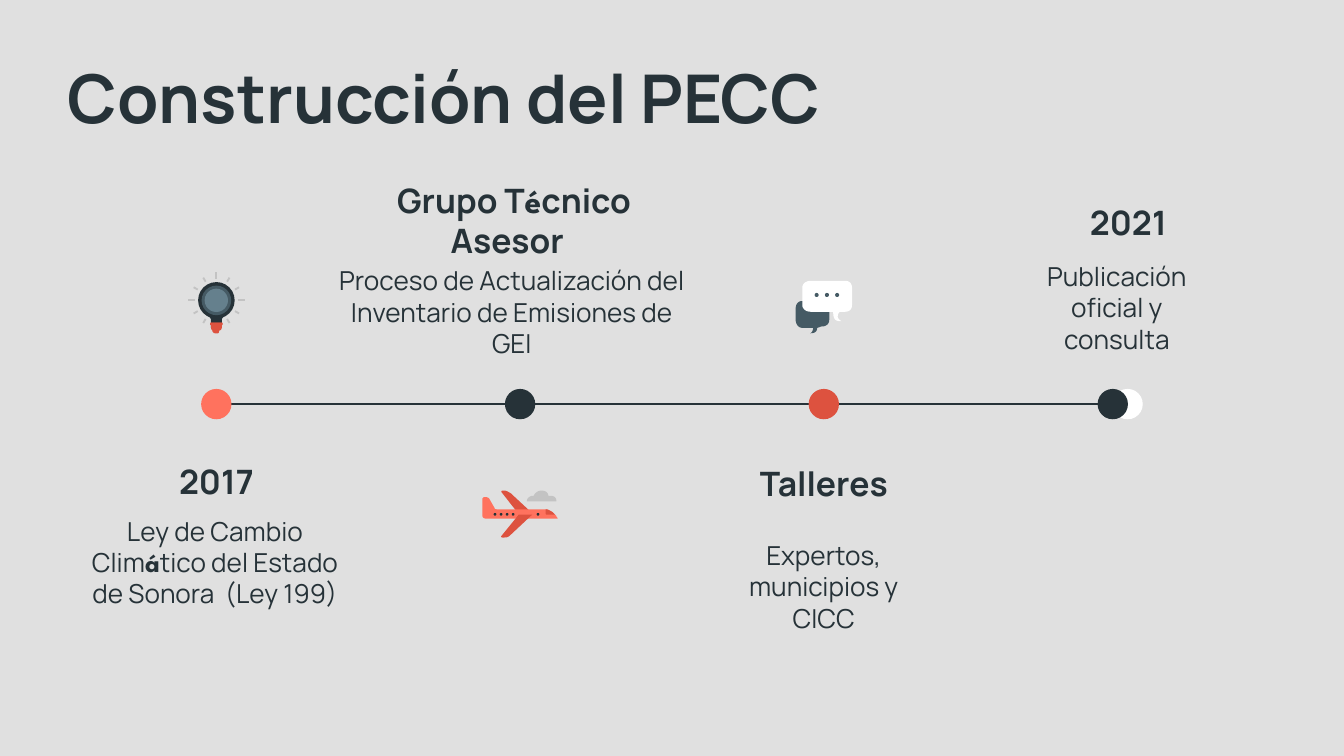
from math import cos, pi, sin
from lxml.etree import SubElement
from pptx import Presentation
from pptx.dml.color import RGBColor
from pptx.enum.shapes import MSO_CONNECTOR, MSO_SHAPE
from pptx.enum.text import MSO_ANCHOR, PP_ALIGN
from pptx.oxml.ns import qn
from pptx.util import Inches, Pt

PAPER = RGBColor(0xE0, 0xE0, 0xE0)
INK = RGBColor(0x26, 0x32, 0x38)
SLATE = RGBColor(0x45, 0x5A, 0x64)
STEEL = RGBColor(0x65, 0x80, 0x8D)
CORAL = RGBColor(0xFF, 0x72, 0x5E)
RED = RGBColor(0xDD, 0x52, 0x3F)
GREY = RGBColor(0xC3, 0xC3, 0xC3)
WHITE = RGBColor(0xFF, 0xFF, 0xFF)
COLS = 100  # square grid cells across the slide


def write(frame, text, size=14, bold=False, align=PP_ALIGN.CENTER,
          font="Manrope", accent="League Spartan", color=INK):
    """Fill a frame; the parts between asterisks take the accent font."""
    para = frame.paragraphs[0]
    para.alignment = align
    for i, part in enumerate(text.split("*")):
        run = para.add_run()
        run.text = part
        run.font.name = accent if i % 2 else font
        run.font.size = Pt(size)
        run.font.bold = bold or i % 2 == 1
        run.font.color.rgb = color


class Board:
    """Holds the style and the current slide; lengths are grid cells."""

    def __init__(self, deck):
        self.cell = deck.slide_width / COLS
        self.slide = deck.slides.add_slide(deck.slide_layouts[6])
        self.slide.background.fill.solid()
        self.slide.background.fill.fore_color.rgb = PAPER
        self.shapes = self.slide.shapes

    def emu(self, *cells):
        return [round(c * self.cell) for c in cells]

    def group(self):
        self.shapes = self.slide.shapes.add_group_shape().shapes

    def text(self, text, x, y, w, h, anchor=MSO_ANCHOR.TOP, **style):
        frame = self.slide.shapes.add_textbox(*self.emu(x, y, w, h)).text_frame
        frame.word_wrap = True
        frame.vertical_anchor = anchor
        frame.margin_left = frame.margin_right = Inches(0.1)
        frame.margin_top = frame.margin_bottom = Inches(0.1)
        write(frame, text, **style)

    def head(self, text, x, y, w):
        self.text(text, x, y, w, 4.1, MSO_ANCHOR.MIDDLE, size=18, bold=True)

    def paint(self, shape, color):
        shape.shadow.inherit = False
        shape.fill.solid()
        shape.fill.fore_color.rgb = color
        shape.line.fill.background()

    def disc(self, color, x, y, r):
        box = self.emu(x - r, y - r, 2 * r, 2 * r)
        self.paint(self.shapes.add_shape(MSO_SHAPE.OVAL, *box), color)

    def line(self, color, x1, y1, x2, y2, width):
        ends = self.emu(x1, y1, x2, y2)
        line = self.shapes.add_connector(MSO_CONNECTOR.STRAIGHT, *ends)
        line.line.color.rgb = color
        line.line.width = Pt(width)
        SubElement(line._element.spPr, qn("a:effectLst"))

    def form(self, color, start, *parts, steps=8):
        """Closed outline: pairs are corners, sixes are cubic curves."""
        pts = [start]
        for part in parts:
            if len(part) == 2:
                pts.append(part)
                continue
            ends = [pts[-1], part[:2], part[2:4], part[4:]]
            for i in range(1, steps + 1):
                t = i / steps
                mix = ((1 - t)**3, 3 * t * (1 - t)**2, 3 * t**2 * (1 - t), t**3)
                pts.append(tuple(sum(m * p[k] for m, p in zip(mix, ends))
                                 for k in (0, 1)))
        pts = [self.emu(*p) for p in pts]
        pen = self.shapes.build_freeform(*pts[0])
        pen.add_line_segments(pts[1:], close=True)
        self.paint(pen.convert_to_shape(), color)


def bulb(board, x=16.1, y=22.35):
    board.group()
    # Glass with its neck
    board.form(INK, (15.5, 23.5), (15.6, 23.6, 15.7, 23.7, 15.7, 23.8),
               (15.7, 24.4), (16.5, 24.4), (16.5, 23.8),
               (16.5, 23.7, 16.6, 23.6, 16.7, 23.5))
    for color, r in ((INK, 1.36), (SLATE, 1.1), (STEEL, 0.87)):
        board.disc(color, x, y, r)
    # Rays, one every 30 degrees except straight down
    for i in range(12):
        if i == 3:
            continue
        near, far = (1.6, 2.1) if i % 3 == 0 else (1.6, 1.95)
        c, s = cos(i * pi / 6), sin(i * pi / 6)
        board.line(GREY, x + near * c, y + near * s, x + far * c, y + far * s, 1)
    # Socket
    board.form(RED, (15.7, 24), (15.7, 24.4), (15.7, 24.5, 15.8, 24.6, 15.8, 24.6),
               (15.8, 24.7, 15.9, 24.8, 16, 24.8), (16.2, 24.8),
               (16.3, 24.8, 16.3, 24.7, 16.3, 24.6),
               (16.4, 24.6, 16.5, 24.5, 16.5, 24.4), (16.5, 24))
    board.form(RED, (15.7, 24), (15.6, 24, 15.6, 24.2, 15.7, 24.2), (16.5, 24.2),
               (16.6, 24.2, 16.6, 24, 16.5, 24))


def chat(board):
    board.group()
    board.form(SLATE, (61.1, 22.4), (59.7, 22.4), (59.4, 22.4, 59.2, 22.6, 59.2, 23),
               (59.2, 23.8), (59.2, 24.1, 59.4, 24.4, 59.7, 24.4), (60.5, 24.4),
               (60.5, 24.4, 60.5, 24.7, 60.3, 24.8),
               (60.6, 24.8, 60.8, 24.7, 60.8, 24.4), (61.1, 24.3),
               (61.5, 24.3, 61.7, 24.1, 61.7, 23.8), (61.7, 22.9),
               (61.7, 22.6, 61.4, 22.4, 61.1, 22.4))
    board.form(WHITE, (60.3, 20.9), (60, 20.9, 59.7, 21.1, 59.7, 21.4), (59.7, 22.7),
               (59.7, 23, 60, 23.2, 60.3, 23.2), (62, 23.2),
               (62, 23.5, 62, 23.9, 62.5, 23.9), (62.6, 23.9),
               (62.5, 23.8, 62.2, 23.7, 62.4, 23.3), (62.5, 23.2), (62.9, 23.2),
               (63.2, 23.2, 63.4, 23, 63.4, 22.7), (63.4, 21.4),
               (63.4, 21.1, 63.2, 20.9, 62.9, 20.9))
    for i in range(3):
        board.disc(SLATE, 60.77 + 0.76 * i, 21.95, 0.15)


def plane(board):
    board.group()
    # Far wing, body, near wing
    board.form(RED, (37.4, 36.5), (37.3, 36.5, 37.3, 36.6, 37.3, 36.6), (38.4, 38),
               (39.4, 38), (38, 36.7), (37.8, 36.6, 37.7, 36.5, 37.5, 36.5))
    board.form(CORAL, (36.2, 37), (36, 37), (36, 37, 35.9, 37.1, 35.9, 37.1),
               (35.9, 38.4), (35.9, 38.5, 36, 38.6, 36.2, 38.6), (41.4, 38.6),
               (41.5, 38.6), (41.5, 38.5, 41.4, 38.5, 41.4, 38.4), (41.1, 38.1),
               (40.9, 38, 40.8, 37.9, 40.6, 37.9), (37, 37.9),
               (36.9, 37.9, 36.8, 37.9, 36.8, 37.8), (36.4, 37.1),
               (36.4, 37.1, 36.3, 37, 36.2, 37))
    board.form(RED, (38.6, 38.3), (37.3, 39.9), (37.3, 40, 37.3, 40, 37.4, 40),
               (37.5, 40), (37.7, 40, 37.8, 40, 38, 39.8), (39.6, 38.3))
    # Cloud
    board.form(GREY, (40.3, 36.5), (40, 36.5, 39.8, 36.7, 39.7, 36.9), (39.6, 36.9),
               (39.4, 36.9, 39.2, 37.1, 39.2, 37.3), (41.4, 37.3),
               (41.4, 37, 41.2, 36.9, 41, 36.9), (40.8, 36.9),
               (40.8, 36.6, 40.5, 36.5, 40.3, 36.5))
    # Windows and cockpit
    for x in (36.83, 37.28, 37.73, 38.18, 40.03):
        board.disc(INK, x, 38.27, 0.1)
    board.form(RED, (40.6, 37.9), (40.6, 38.1), (40.6, 38.2, 40.6, 38.3, 40.7, 38.3),
               (41.3, 38.3), (41.1, 38.1), (40.9, 38, 40.8, 37.9, 40.6, 37.9))


def main():
    deck = Presentation()
    deck.slide_width = Inches(10)
    deck.slide_height = deck.slide_width * 9 // 16
    board = Board(deck)

    # Timeline with evenly spaced stops; the last one has a dark disc on top
    first, gap, level = 16.1, 22.6, 30.07
    board.line(INK, first, level, first + 3 * gap, level, 0.75)
    for i, color in enumerate((CORAL, INK, RED, WHITE)):
        board.disc(color, first + i * gap, level, 1.13)
    board.disc(INK, 82.8, level, 1.13)

    # Title
    board.text("Construcción del PECC", 4.05, 3.2, 84.3, 6.7,
               size=36, bold=True, align=PP_ALIGN.LEFT)

    # Headings and notes of the stops
    board.head("2017", 7.9, 33.75, 16.4)
    board.text("Ley de Cambio Clim*á*tico del Estado de Sonora  (Ley 199)",
               5.4, 37.32, 21.2, 15.2)
    board.head("Grupo T*é*cnico Asesor  ", 26.6, 14.33, 23.3)
    board.text("Proceso de Actualización del Inventario de Emisiones de GEI",
               24.03, 18.7, 28.1, 8.6)
    board.head("Talleres", 53.1, 33.9, 16.4)
    board.text("Expertos, municipios y CICC", 53.1, 39.13, 16.4, 8.6)
    board.head("2021", 74.9, 14.5, 18.1)
    board.text("Publicación oficial y consulta", 74.9, 18.37, 16.4, 8.6)

    # Icons
    for icon in (bulb, chat, plane):
        icon(board)
    deck.save("out.pptx")


if __name__ == "__main__":
    main()
